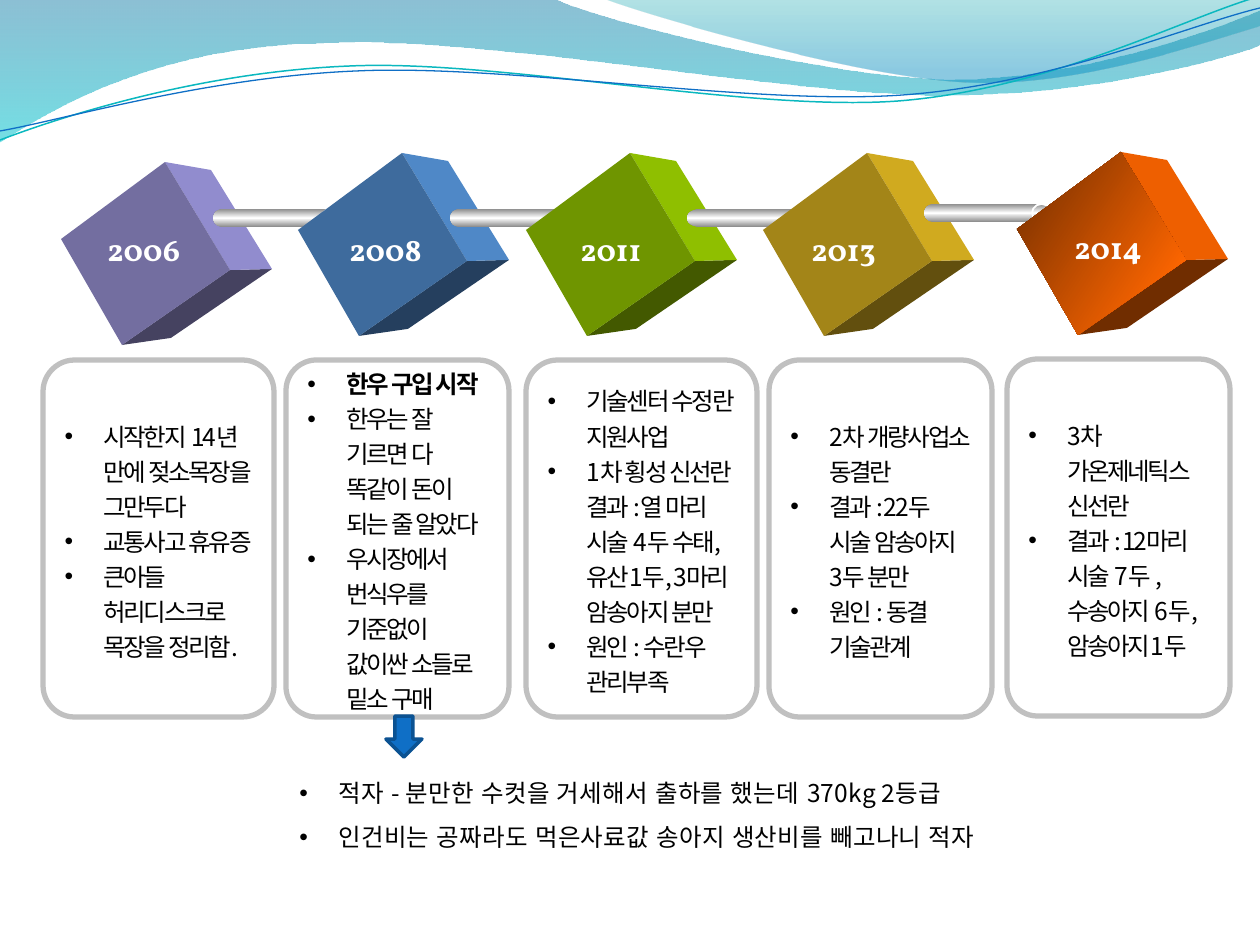
from typing import NamedTuple

from lxml.etree import SubElement
from pptx import Presentation
from pptx.dml.color import RGBColor
from pptx.enum.shapes import MSO_SHAPE
from pptx.enum.text import MSO_ANCHOR, PP_ALIGN
from pptx.oxml import parse_xml
from pptx.oxml.ns import qn
from pptx.util import Pt

EMU_PER_PX = 914400 / 126
NS = "http://schemas.openxmlformats.org/drawingml/2006/main"
BODY_FONT, YEAR_FONT = "Noto Sans CJK KR", "Vollkorn"
COLORS = {
    "text": "000000", "white": "FFFFFF", "border": "C0C0C0", "steel": "8C8C8C",
    "arrow": "0F6FC6", "arrow_edge": "0B5292", "teal_line": "0AB8BF",
    "wave_top": "0074A1", "wave_bottom": "00C6CF",
    "crest_top": "00A1A9", "crest_bottom": "008BBF",
    "purple": "736EA0", "purple_side": "918CCE", "purple_base": "454260",
    "blue": "3E6B9D", "blue_side": "4F88C7", "blue_base": "253F5E",
    "green": "6F9500", "green_side": "8FBF00", "green_base": "435900",
    "gold": "A38518", "gold_side": "D0AA1F", "gold_base": "624F0E",
    "orange": "FF6600", "orange_side": "EE5F00", "orange_base": "702D00",
}


class Stop(NamedTuple):
    position: int
    color: str
    opacity: int = 100


class Gradient(NamedTuple):
    stops: tuple
    angle: int = 90


class Rod(NamedTuple):
    left: int
    top: int
    stretch: float = 1.0


class Milestone(NamedTuple):
    year: str
    hue: str
    cube: tuple
    year_at: tuple
    card: tuple
    events: tuple
    bold_events: int = 0


STEEL = Gradient((Stop(0, "steel"), Stop(50, "white"), Stop(100, "steel")))
ORANGE_FACE = Gradient((Stop(0, "orange_base"), Stop(85, "orange")), 33)
CUBE_FACES = {
    "_base": ((122, 345), (230, 270), (272, 269), (171, 338)),
    "_side": ((165, 162), (211, 170), (272, 269), (230, 270)),
    "": ((61, 239), (165, 162), (230, 270), (122, 345)),
}
MILESTONES = (
    Milestone("2006", "purple", (0, 0), (95, 224), (43, 360, 231, 357), (
        "시작한지 14년 만에 젖소목장을 그만두다", "교통사고 휴유증",
        "큰아들 허리디스크로 목장을 정리함.")),
    Milestone("2008", "blue", (237, -9), (337, 224), (286, 360, 223, 357), (
        "한우 구입 시작", "한우는 잘 기르면 다 똑같이 돈이 되는 줄 알았다",
        "우시장에서 번식우를 기준없이 값이싼 소들로 밑소 구매"), 1),
    Milestone("2011", "green", (465, -9), (568, 224), (526, 360, 231, 357), (
        "기술센터 수정란 지원사업",
        "1차 횡성 신선란 결과 :열 마리 시술 4두 수태, 유산1두, 3마리 암송아지 분만",
        "원인 : 수란우 관리부족")),
    Milestone("2013", "gold", (702, -9), (799, 224), (769, 360, 223, 357), (
        "2차 개량사업소 동결란", "결과 : 22두 시술 암송아지 3두 분만",
        "원인 : 동결 기술관계")),
    Milestone("2014", "orange", (956, -10), (1062, 222), (1007, 359, 223, 357), (
        "3차 가온제네틱스 신선란",
        "결과 : 12마리 시술 7두 ,수송아지 6두, 암송아지1두")),
)
RODS = (Rod(213, 209), Rod(450, 209), Rod(687, 209, 1.32), Rod(924, 204))
LOSSES = ("적자 - 분만한 수컷을 거세해서 출하를 했는데 370kg 2등급",
          "인건비는 공짜라도 먹은사료값 송아지 생산비를 빼고나니 적자")
WAVE = ((0, 0), (554, -1), (600, 21, 837, 79, 955, 79), (1075, 79, 1207, 33, 1260, 11),
        (1261, 45), (1239, 55, 1096, 96, 940, 95), (784, 95, 481, 35, 324, 43),
        (163, 45, 58, 105, -1, 142))
CREST = ((604, -1), (641, 14, 859, 78, 969, 82), (1079, 87, 1211, 40, 1260, 26), (1260, 0))
TEAL_CURVE = ((0, 140), (60, 117, 199, 72, 349, 66), (498, 59, 747, 112, 898, 101),
              (1050, 89, 1182, 19, 1257, -3))
BLUE_CURVE = ((0, 131), (59, 121, 207, 77, 357, 71), (508, 64, 752, 106, 903, 95),
              (1053, 84, 1186, 26, 1260, 8))


def px(length: float) -> int:
    return round(length * EMU_PER_PX)


def rgb(name: str) -> RGBColor:
    return RGBColor.from_string(COLORS[name])


def style(shape, fill=None, line: str = None, width: float = 1):
    shape.shadow.inherit = False
    if fill is None:
        shape.fill.background()
    elif isinstance(fill, Gradient):
        stops = "".join(
            f'<a:gs pos="{s.position * 1000}"><a:srgbClr val="{COLORS[s.color]}">'
            f'<a:alpha val="{s.opacity * 1000}"/></a:srgbClr></a:gs>' for s in fill.stops)
        gradient = parse_xml(
            f'<a:gradFill xmlns:a="{NS}" rotWithShape="1"><a:gsLst>{stops}</a:gsLst>'
            f'<a:lin ang="{fill.angle * 60000}" scaled="0"/></a:gradFill>')
        geometry = shape.element.spPr.find(qn("a:custGeom"))
        if geometry is None:
            geometry = shape.element.spPr.find(qn("a:prstGeom"))
        geometry.addnext(gradient)
    else:
        shape.fill.solid()
        shape.fill.fore_color.rgb = rgb(fill)
    if line is None:
        shape.line.fill.background()
    else:
        shape.line.color.rgb = rgb(line)
        shape.line.width = Pt(width)
    return shape


def add_preset(shapes, kind, box: tuple, **look):
    return style(shapes.add_shape(kind, *map(px, box)), **look)


def add_outline(shapes, steps: tuple, close: bool = True, **look):
    start, *segments = steps
    points = [(px(s[i]), px(s[i + 1])) for s in segments for i in range(0, len(s), 2)]
    builder = shapes.build_freeform(*map(px, start), scale=1.0)
    builder.add_line_segments(points, close=close)
    outline = builder.convert_to_shape()
    lines = iter(list(outline.element.iter(qn("a:lnTo"))))
    for segment in segments:
        first = next(lines)
        if len(segment) == 6:
            first.tag = qn("a:cubicBezTo")
            for _ in range(2):
                control = next(lines)
                first.append(control[0])
                control.getparent().remove(control)
    return style(outline, **look)


def write(frame, lines: tuple, *, font: str = BODY_FONT, size: int = 14,
          color: str = "text", bold_lines: int = 0, bullet: bool = True,
          line_spacing=None, tracking: int = 0, wrap: bool = True,
          anchor=MSO_ANCHOR.TOP) -> None:
    frame.word_wrap = wrap
    frame.vertical_anchor = anchor
    for i, line in enumerate(lines):
        paragraph = frame.paragraphs[0] if i == 0 else frame.add_paragraph()
        paragraph.alignment = PP_ALIGN.LEFT
        if line_spacing:
            paragraph.line_spacing = line_spacing
        if bullet:
            properties = paragraph._p.get_or_add_pPr()
            properties.set("marL", str(px(39)))
            properties.set("indent", str(-px(39)))
            properties.set("hangingPunct", "0")
            SubElement(properties, qn("a:buFont")).set("typeface", "Arial")
            SubElement(properties, qn("a:buChar")).set("char", "•")
        run = paragraph.add_run()
        run.text = line
        run.font.name, run.font.size = font, Pt(size)
        run.font.bold = i < bold_lines
        run.font.color.rgb = rgb(color)
        run_properties = run._r.get_or_add_rPr()
        run_properties.set("lang", "ko-KR")
        SubElement(run_properties, qn("a:ea")).set("typeface", font)
        if tracking:
            run_properties.set("spc", str(tracking))


def draw_cube(shapes, milestone: Milestone) -> None:
    dx, dy = milestone.cube
    for part, corners in CUBE_FACES.items():
        fill = milestone.hue + part
        add_outline(shapes, tuple((x + dx, y + dy) for x, y in corners),
                    fill=ORANGE_FACE if fill == "orange" else fill)


def draw_rod(shapes, rod: Rod) -> None:
    parts = ((MSO_SHAPE.OVAL, 0, 0, 21, 18, None), (MSO_SHAPE.RECTANGLE, 11, 0, 107, 18, None),
             (MSO_SHAPE.OVAL, 108, 0, 19, 18, "white"), (MSO_SHAPE.OVAL, 118, 6, 5, 5, None))
    group = shapes.add_group_shape()
    for kind, x, y, width, height, edge in parts:
        box = (rod.left + x * rod.stretch, rod.top + y, width * rod.stretch, height)
        add_preset(group.shapes, kind, box, fill=STEEL, line=edge)


def draw_card(shapes, milestone: Milestone) -> None:
    card = add_preset(shapes, MSO_SHAPE.ROUNDED_RECTANGLE, milestone.card,
                      line="border", width=3)
    card.adjustments[0] = 0.137
    write(card.text_frame, milestone.events, bold_lines=milestone.bold_events,
          line_spacing=Pt(20), tracking=-140, anchor=MSO_ANCHOR.MIDDLE)


def main() -> None:
    deck = Presentation()
    deck.slide_width, deck.slide_height = px(1260), px(945)
    shapes = deck.slides.add_slide(deck.slide_layouts[6]).shapes

    add_outline(shapes, WAVE, fill=Gradient(
        (Stop(0, "wave_top", 45), Stop(100, "wave_bottom", 55))))
    add_outline(shapes, CREST, fill=Gradient(
        (Stop(0, "crest_top", 30), Stop(80, "crest_bottom", 45))))
    add_outline(shapes, TEAL_CURVE, close=False, line="teal_line", width=0.85)
    add_outline(shapes, BLUE_CURVE, close=False, line="arrow", width=0.75)

    for i, milestone in enumerate(MILESTONES):
        draw_card(shapes, milestone)
        draw_cube(shapes, milestone)
        year = shapes.add_textbox(*map(px, (*milestone.year_at, 98, 50)))
        write(year.text_frame, (milestone.year,), font=YEAR_FONT, size=18,
              color="white", bold_lines=1, bullet=False, wrap=False)
        if i < len(RODS):
            draw_rod(shapes, RODS[i])

    losses = shapes.add_textbox(*map(px, (287, 757, 751, 98)))
    write(losses.text_frame, LOSSES, line_spacing=1.5, tracking=14)
    add_preset(shapes, MSO_SHAPE.DOWN_ARROW, (386, 716, 36, 41),
               fill="arrow", line="arrow_edge", width=2)
    deck.save("out.pptx")


if __name__ == "__main__":
    main()
